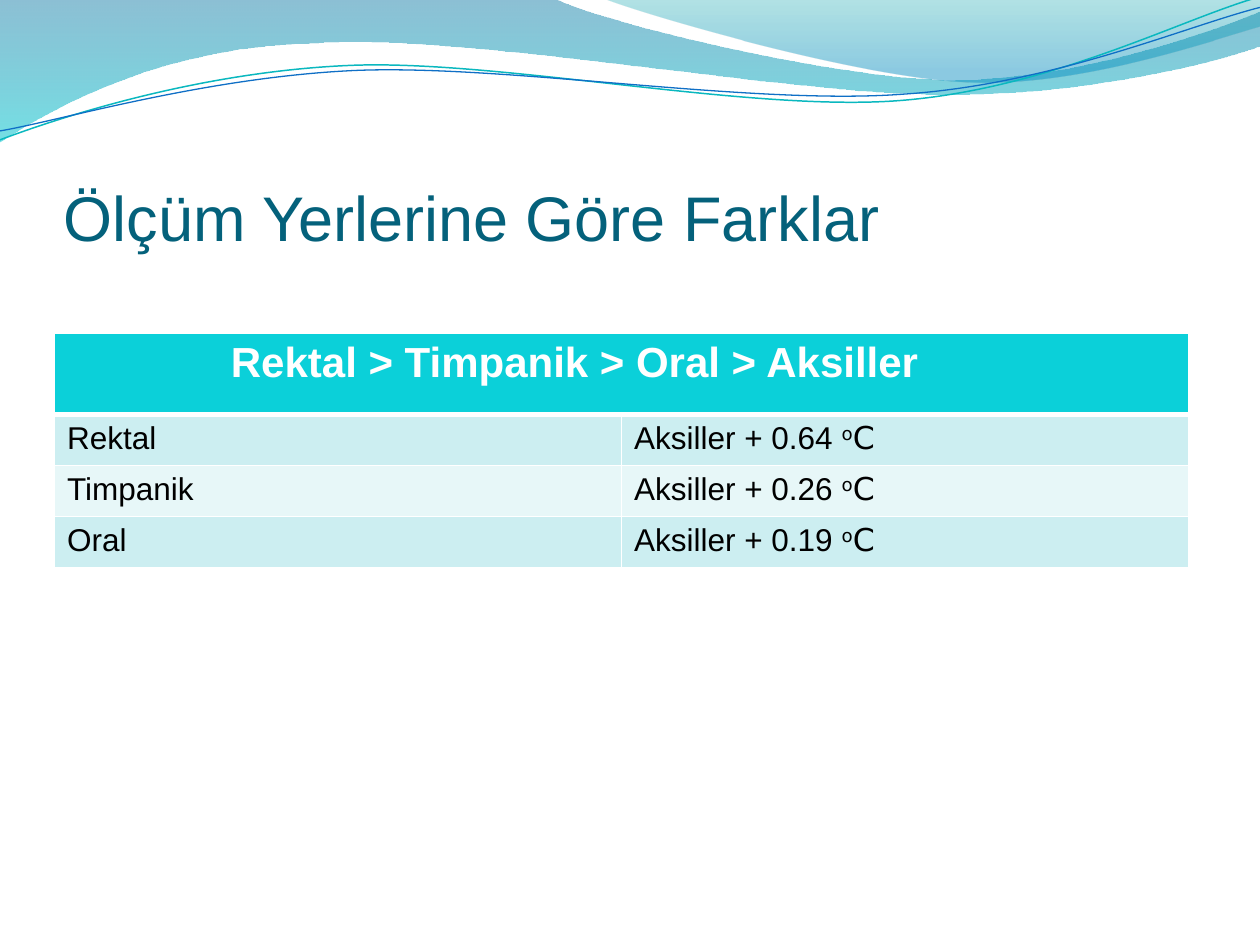
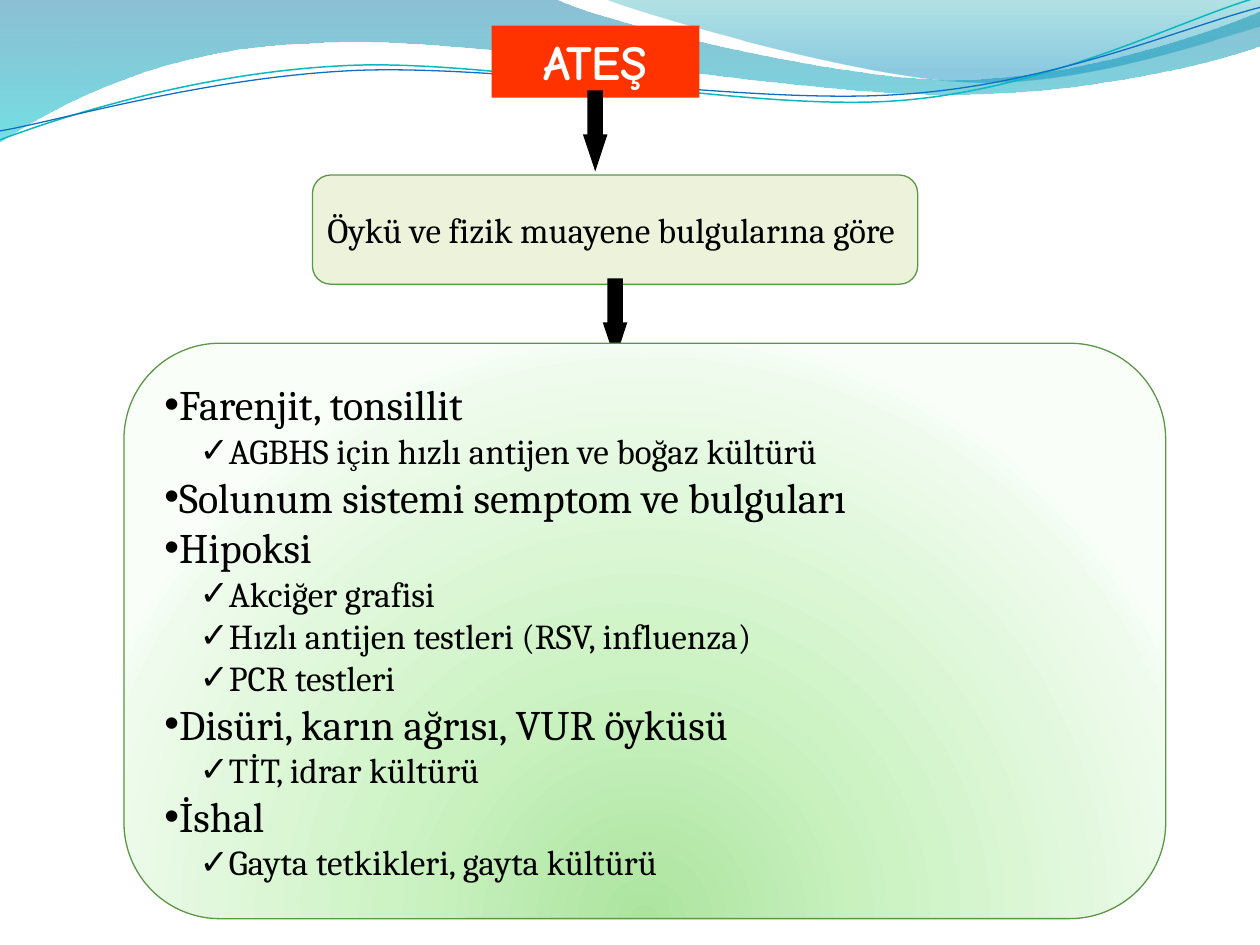
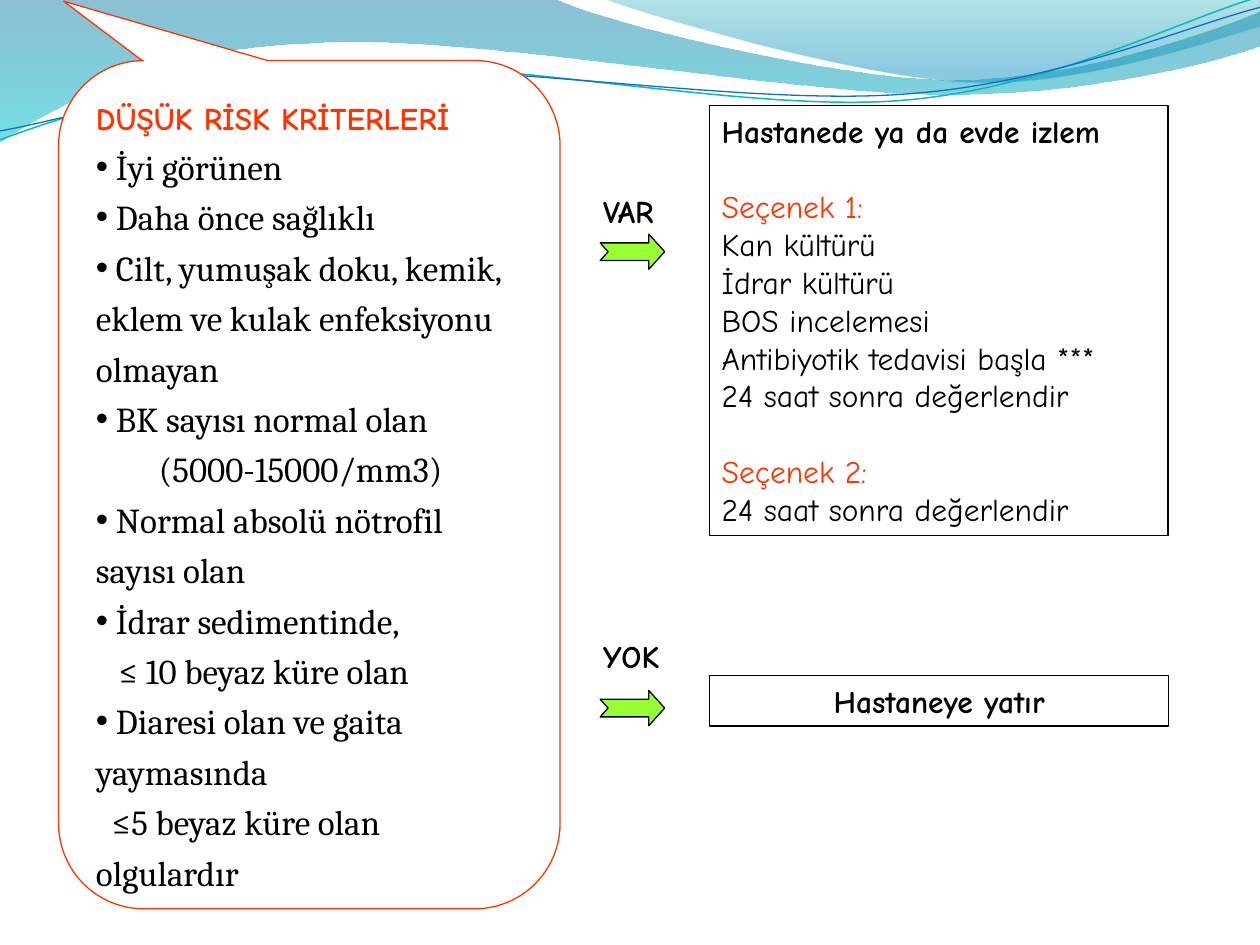
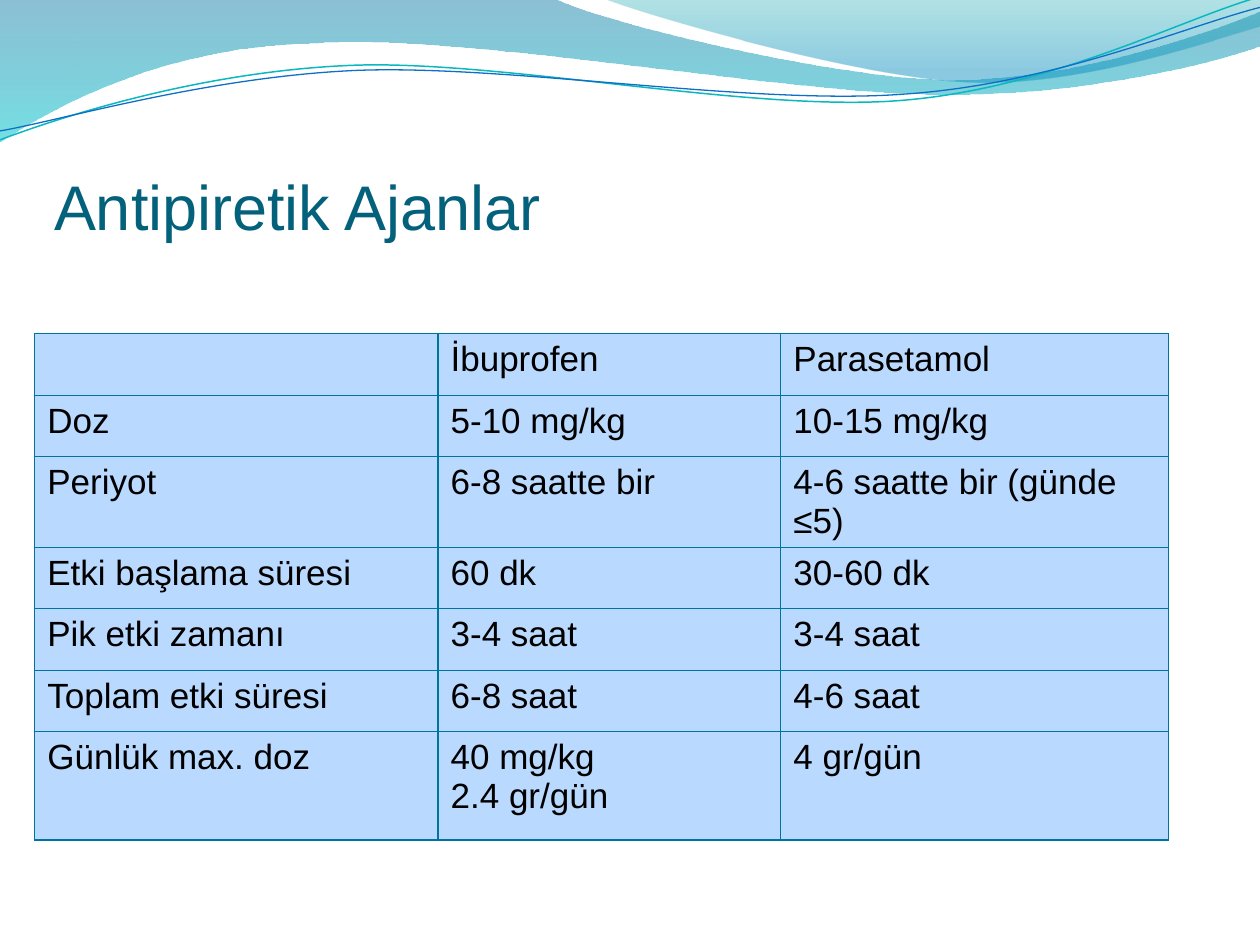
import math
from dataclasses import dataclass

from lxml import etree
from pptx import Presentation
from pptx import util as u
from pptx.dml.color import RGBColor
from pptx.enum import shapes as es
from pptx.enum import text as et
from pptx.oxml.ns import qn

KIND = es.MSO_SHAPE
TOP, MID, LOW = et.MSO_ANCHOR.TOP, et.MSO_ANCHOR.MIDDLE, et.MSO_ANCHOR.BOTTOM
LEFT, CENTER = et.PP_ALIGN.LEFT, et.PP_ALIGN.CENTER
GROW = et.MSO_AUTO_SIZE.SHAPE_TO_FIT_TEXT


@dataclass(frozen=True)
class Theme:
    black: str = "000000"
    white: str = "FFFFFF"
    title: str = "04617B"
    red: str = "FF3300"
    blue: str = "0F6FC6"
    aqua: str = "0AB8BF"
    lime: str = "99FF33"
    cream: str = "EDF3DB"
    green: str = "5B9747"
    head: str = "0BD0D9"
    bands: tuple = ("CCEEF1", "E7F7F8")
    grid: str = "0074A1"
    cell: str = "BAD9FE"
    glow: tuple = ((0, "ACE49F", 100), (43, "CDF3C4", 100),
                   (93, "EFFBED", 100), (100, "F9FFF8", 100))
    deep: tuple = ((0, "0074A1", 45), (100, "00C6CF", 55))
    light: tuple = ((0, "00A1A9", 30), (80, "008BBF", 45))
    sans: str = "Arial"
    serif: str = "Cambria"
    comic: str = "Comic Neue"
    sign: str = "DejaVu Sans"
    huge: float = 36
    big: float = 28
    large: float = 24
    body: float = 20
    small: float = 18
    thin: float = 0.75


T = Theme()
DOWN = '<a:lin ang="5400000" scaled="0"/>'
ROUND = '<a:path path="circle"><a:fillToRect l="50000" t="130000" r="50000" b="-30000"/></a:path>'
TILT = 2.7
MARKS = {"•": T.sans, "✓": T.sign}

DEEP = [(0, 0), (11.18, -0.03),
        (12.09, 0.43, 16.87, 1.6, 19.25, 1.6), (21.67, 1.6, 24.33, 0.66, 25.4, 0.23),
        (25.43, 0.91),
        (24.97, 1.12, 22.1, 1.93, 18.95, 1.9), (15.8, 1.9, 9.7, 0.71, 6.53, 0.86),
        (3.28, 0.91, 1.17, 2.11, -0.03, 2.87), (0, 0)]
LIGHT = [(12.17, -0.03), (12.93, 0.28, 17.32, 1.57, 19.53, 1.65),
         (21.74, 1.75, 24.41, 0.81, 25.4, 0.53), (25.4, 0), (12.17, -0.03)]
AQUA = [(0, 2.82), (1.22, 2.36, 4.01, 1.45, 7.04, 1.32),
        (10.03, 1.19, 15.06, 2.26, 18.11, 2.03), (21.16, 1.8, 23.83, 0.38, 25.35, -0.05)]
BLUE = [(0, 2.64), (1.19, 2.44, 4.17, 1.55, 7.19, 1.42),
        (10.24, 1.3, 15.16, 2.13, 18.21, 1.9), (21.23, 1.7, 23.9, 0.53, 25.4, 0.15)]


def node(xml):
    space = "http://schemas.openxmlformats.org/drawingml/2006/main"
    return etree.fromstring(f'<a:top xmlns:a="{space}">{xml}</a:top>')[0]


def apply(item, values):
    for key, value in values.items():
        setattr(item, key, value)


def font(size, name, color=T.black, bold=False):
    return {"size": u.Pt(size), "name": name, "bold": bold, "color": color}


def style(target, values):
    apply(target, {k: v for k, v in values.items() if k not in ("color", "base")})
    if "color" in values:
        target.color.rgb = RGBColor.from_string(values["color"])


def para(words, look=None, mark=None, left=0, first=0, **form):
    return words, look or {}, mark, left, first, {"alignment": LEFT, **form}


def write(frame, lines, base):
    for i, (words, look, mark, left, first, form) in enumerate(lines):
        item = frame.add_paragraph() if i else frame.paragraphs[0]
        props = item._p.get_or_add_pPr()
        props.set("marL", str(u.Cm(left)))
        props.set("indent", str(u.Cm(first)))
        if mark:
            props.append(node(f'<a:buFont typeface="{MARKS[mark]}"/>'))
            props.append(node(f'<a:buChar char="{mark}"/>'))
        apply(item, form)
        for piece, extra in [(words, {})] if isinstance(words, str) else words:
            if not piece:
                continue
            run = item.add_run()
            run.text = piece
            style(run.font, {**base, **look, **extra})
            if "base" in extra:
                run._r.get_or_add_rPr().set("baseline", str(extra["base"] * 1000))


def blend(shape, stops, way):
    shape.fill.background()
    marks = "".join(
        f'<a:gs pos="{pos * 1000}"><a:srgbClr val="{color}">'
        f'<a:alpha val="{alpha * 1000}"/></a:srgbClr></a:gs>'
        for pos, color, alpha in stops)
    props = shape._element.spPr
    props.replace(props.find(qn("a:noFill")),
                  node(f'<a:gradFill rotWithShape="1"><a:gsLst>{marks}</a:gsLst>{way}</a:gradFill>'))


def paint(shape, fill=None, line=None, width=T.thin):
    shape.shadow.inherit = False
    if fill:
        shape.fill.solid()
        shape.fill.fore_color.rgb = RGBColor.from_string(fill)
    else:
        shape.fill.background()
    if line:
        shape.line.color.rgb = RGBColor.from_string(line)
        shape.line.width = u.Pt(width)
    else:
        shape.line.fill.background()


def box(slide, kind, at, fill=None, line=None, width=T.thin, adj=()):
    shape = slide.shapes.add_shape(kind, *map(u.Cm, at))
    paint(shape, fill, line, width)
    for i, value in enumerate(adj):
        shape.adjustments[i] = value
    return shape


def fill_in(shape, lines, base, **form):
    frame = shape.text_frame
    apply(frame, {"word_wrap": True, "vertical_anchor": TOP, **form})
    write(frame, lines, base)


def label(slide, at, lines, base, **form):
    fill_in(slide.shapes.add_textbox(*map(u.Cm, at)), lines, base, **form)


def turn(x, y, pivot):
    cos, sin = math.cos(math.radians(TILT)), math.sin(math.radians(TILT))
    x, y = x - pivot[0], y - pivot[1]
    return pivot[0] + x * cos - y * sin, pivot[1] + x * sin + y * cos


def curve(slide, knots, pivot=None):
    spots = [knot[i:i + 2] for knot in knots for i in range(0, len(knot), 2)]
    if pivot:
        spots = [turn(x, y, pivot) for x, y in spots]
    spots = [(u.Cm(x), u.Cm(y)) for x, y in spots]
    pen = slide.shapes.build_freeform(*spots[0])
    pen.add_line_segments(spots[1:], close=not pivot)
    shape = pen.convert_to_shape()
    legs = iter(list(shape._element.iter(qn("a:lnTo"))))
    for knot in knots[1:]:
        leg = next(legs)
        if len(knot) == 6:
            leg.addprevious(node("<a:cubicBezTo/>"))
            bend = leg.getprevious()
            for part in (leg, next(legs), next(legs)):
                bend.append(part[0])
                part.getparent().remove(part)
    return shape


def waves(slide):
    for knots, stops in ((DEEP, T.deep), (LIGHT, T.light)):
        shape = curve(slide, knots)
        paint(shape)
        blend(shape, stops, DOWN)
    for knots, color, width, pivot in ((AQUA, T.aqua, 0.85, (12.68, 1.46)),
                                       (BLUE, T.blue, T.thin, (12.69, 1.5))):
        shape = curve(slide, knots, pivot)
        paint(shape, None, color, width)
        shape.rotation = 360 - TILT


def title(slide, left, top, words):
    label(slide, (left, top, 22.86, 3.18), [para(words)], font(T.huge, T.sans, T.title),
          vertical_anchor=LOW, margin_left=0, margin_right=0,
          margin_top=u.Cm(0.13), margin_bottom=0)


def grid(slide, left, top, cols, rows):
    frame = slide.shapes.add_table(len(rows), len(cols), u.Cm(left), u.Cm(top),
                                   u.Cm(sum(cols)), u.Cm(sum(rows)))
    table = frame.table
    apply(table, {"first_row": False, "horz_banding": False})
    for col, width in zip(table.columns, cols):
        col.width = u.Cm(width)
    for row, height in zip(table.rows, rows):
        row.height = u.Cm(height)
    return table


def dress(cell, fill, line, **widths):
    props = cell._tc.get_or_add_tcPr()
    for side in "LRTB":
        width = u.Pt(widths.get(side, widths["rest"]))
        props.append(node(f'<a:ln{side} w="{width}"><a:solidFill><a:srgbClr val="{line}"/>'
                          f'</a:solidFill></a:ln{side}>'))
    cell.fill.solid()
    cell.fill.fore_color.rgb = RGBColor.from_string(fill)


def sites(slide):
    title(slide, 1.29, 1.95, "Ölçüm Yerlerine Göre Farklar")
    table = grid(slide, 1.1, 6.72, [11.43] * 2, [1.63] + [1.03] * 3)
    for cell in table.rows[0].cells:
        dress(cell, T.head, T.white, rest=1, B=3)
    head = table.cell(0, 0)
    head.merge(table.cell(0, 1))
    write(head.text_frame, [para("Rektal > Timpanik > Oral > Aksiller", left=3.3)],
          font(T.large, T.sans, T.white, True))
    data = (("Rektal", "0.64"), ("Timpanik", "0.26"), ("Oral", "0.19"))
    for i, (site, gap) in enumerate(data, 1):
        sum_up = [(f"Aksiller + {gap} ", {}), ("o", {"name": T.sign, "base": 30}),
                  ("C", {"name": T.sign, "base": 0})]
        for j, words in enumerate((site, sum_up)):
            cell = table.cell(i, j)
            dress(cell, T.bands[(i - 1) % 2], T.white, rest=1, T=3 if i == 1 else 1)
            write(cell.text_frame, [para(words)], font(T.small, T.sans))


def fever(slide):
    def arrow(left, top):
        shape = box(slide, KIND.DOWN_ARROW, (left, top, 0.2, 1.19),
                    T.blue, T.black, 6, (0.5, 1.51))
        shape.line._get_or_add_ln().append(node('<a:miter lim="800000"/>'))

    def check(words):
        return para(words, {"size": u.Pt(T.body)}, "✓", 1.27, -0.56, level=1)

    def point(words):
        return para(words, mark="•")

    start = box(slide, KIND.RECTANGLE, (9.91, 0.52, 4.19, 1.45), T.red)
    fill_in(start, [para("ATEŞ", alignment=CENTER)],
            font(T.big, T.comic, T.white, True), auto_size=GROW)
    arrow(11.9, 1.93)
    exam = box(slide, KIND.ROUNDED_RECTANGLE, (6.3, 3.53, 12.2, 2.2), T.cream, T.green)
    fill_in(exam, [para("Öykü ve fizik muayene bulgularına göre ", alignment=CENTER)],
            font(T.body, T.serif), vertical_anchor=MID, word_wrap=False)
    arrow(12.3, 5.72)
    panel = box(slide, KIND.ROUNDED_RECTANGLE, (2.5, 6.92, 21, 11.6), None, T.green)
    blend(panel, T.glow, ROUND)
    fill_in(panel, [
        point("Farenjit, tonsillit"),
        check("AGBHS için hızlı antijen ve boğaz kültürü"),
        point("Solunum sistemi semptom ve bulguları"),
        point("Hipoksi"),
        check("Akciğer grafisi"),
        check("Hızlı antijen testleri (RSV, influenza)"),
        check("PCR testleri"),
        point("Disüri, karın ağrısı, VUR öyküsü"),
        check("TİT, idrar kültürü"),
        point("İshal"),
        check("Gayta tetkikleri, gayta kültürü"),
    ], font(T.large, T.serif), vertical_anchor=MID, word_wrap=False)


def risk(slide):
    def line(words, look=None, mark=None, **rest):
        return para(words, look, mark, line_spacing=1.2, **rest)

    def point(words):
        return line(" " + words, mark="•")

    strong = font(T.small, T.comic, bold=True)
    plain = {"bold": False}
    option = {"color": T.red, "bold": False}
    gap = u.Pt(21.6)

    call = box(slide, KIND.ROUNDED_RECTANGULAR_CALLOUT, (1.18, 1.22, 10.11, 17.1),
               T.white, T.red, adj=(0.49, 0.57, 0.17))
    call.rotation = 180
    call.text_frame._txBody.bodyPr.set("rot", "10800000")
    fill_in(call, [
        line("DÜŞÜK RİSK KRİTERLERİ", font(T.small, T.comic, T.red, True)),
        point("İyi görünen"),
        point("Daha önce sağlıklı"),
        point("Cilt, yumuşak doku, kemik, eklem ve kulak enfeksiyonu olmayan"),
        point("BK sayısı normal olan"),
        line("(5000-15000/mm3)", left=1.27, level=1),
        point("Normal absolü nötrofil sayısı olan"),
        point("İdrar sedimentinde,"),
        line("≤ 10 beyaz küre olan", first=0.46),
        point("Diaresi olan ve gaita yaymasında"),
        line("≤5 beyaz küre olan olgulardır", first=0.32),
    ], font(T.body, T.serif))

    for top in (4.72, 13.92):
        box(slide, KIND.NOTCHED_RIGHT_ARROW, (12.1, top, 1.3, 0.71),
            T.lime, T.black, adj=(0.5, 0.45))
    for words, top in (("VAR", 3.74), ("YOK", 12.72)):
        label(slide, (11.91, top, 1.8, 1.02), [para(words)], strong,
              word_wrap=False, auto_size=GROW)

    watch = box(slide, KIND.RECTANGLE, (14.3, 2.13, 9.25, 8.66), None, T.black)
    steps = ("Kan kültürü", "İdrar kültürü", "BOS incelemesi",
             "Antibiyotik tedavisi başla ***", "24 saat sonra değerlendir")
    fill_in(watch, [
        para("Hastanede ya da evde izlem"),
        para("Seçenek 1:", option, space_before=gap),
        *[para(step, plain) for step in steps],
        para("Seçenek 2:", option, space_before=gap),
        para(steps[-1], plain),
    ], strong, word_wrap=False, auto_size=GROW)
    admit = box(slide, KIND.RECTANGLE, (14.31, 13.62, 9.25, 1.02), None, T.black)
    fill_in(admit, [para("Hastaneye yatır", alignment=CENTER)], strong, auto_size=GROW)


def drugs(slide):
    title(slide, 1.09, 1.73, "Antipiretik Ajanlar")
    data = (("", "İbuprofen", "Parasetamol"),
            ("Doz", "5-10 mg/kg", "10-15 mg/kg"),
            ("Periyot", "6-8 saatte bir", "4-6 saatte bir (günde ≤5)"),
            ("Etki başlama süresi", "60 dk", "30-60 dk"),
            ("Pik etki zamanı", "3-4 saat", "3-4 saat"),
            ("Toplam etki süresi", "6-8 saat", "4-6 saat"),
            ("Günlük max. doz", "40 mg/kg\n2.4 gr/gün", "4 gr/gün"))
    table = grid(slide, 0.7, 6.73, [8.13, 6.91, 7.82],
                 [1.24, 1.24, 1.32, 1.24, 1.24, 1.24, 2.18])
    for i, row in enumerate(data):
        for j, words in enumerate(row):
            cell = table.cell(i, j)
            dress(cell, T.cell, T.grid, rest=T.thin)
            write(cell.text_frame, [para(part) for part in words.split("\n")],
                  font(T.body, T.sans))
    table.cell(2, 2).margin_bottom = 0


def main():
    deck = Presentation()
    apply(deck, {"slide_width": u.Cm(25.4), "slide_height": u.Cm(19.05)})
    for build in (sites, fever, risk, drugs):
        slide = deck.slides.add_slide(deck.slide_layouts[6])
        waves(slide)
        build(slide)
    deck.save("out.pptx")


if __name__ == "__main__":
    main()
